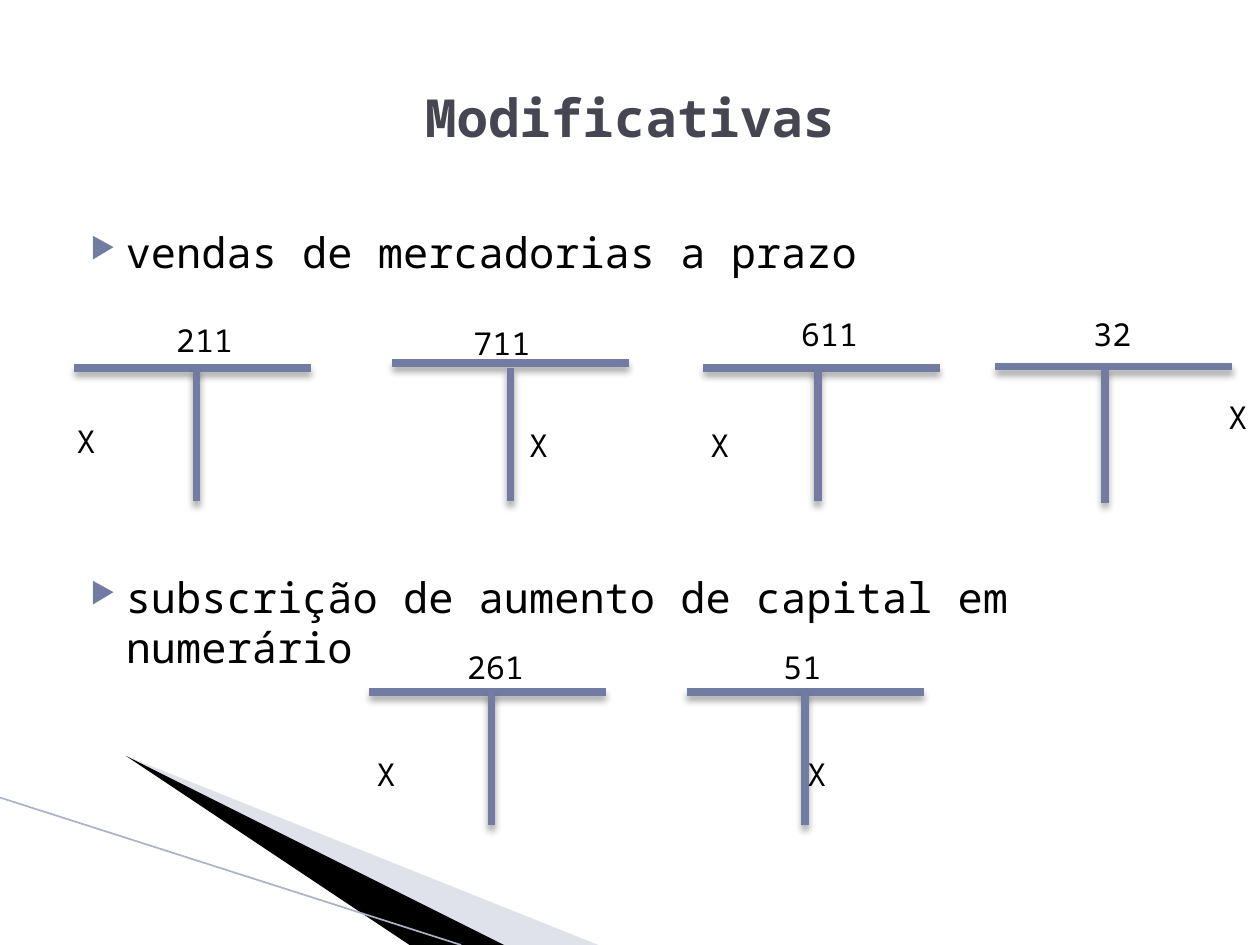
import pptx
import pptx.util
import pptx.dml.color
import pptx.enum.shapes
import pptx.enum.text
import pptx.oxml
import pptx.oxml.ns
from lxml import etree

Inches, Pt = pptx.util.Inches, pptx.util.Pt
RGBColor = pptx.dml.color.RGBColor
Anchor, Align = pptx.enum.text.MSO_ANCHOR, pptx.enum.text.PP_ALIGN
qn = pptx.oxml.ns.qn

FONT = "Noto Sans Mono"
BLACK = RGBColor(0, 0, 0)
TITLE_GREY = RGBColor(0x46, 0x46, 0x53)
SLATE = RGBColor(0x72, 0x7C, 0xA3)
PALE = RGBColor(0xB3, 0xB7, 0xCB)
EDGE = RGBColor(0xAC, 0xB1, 0xC6)

TITLE = "Modificativas"
# Text and space before in points
BULLETS = [("vendas de mercadorias a prazo", 0),
           ("subscrição de aumento de capital em numerário", 168)]
# Account, bar start, stem top, label corner, entry corner
ACCOUNTS = [
    ("211", (0.59, 2.92), (1.56, 2.92), (1.3, 2.5), (0.51, 3.3)),
    ("711", (3.11, 2.88), (4.05, 2.92), (3.66, 2.52), (4.1, 3.33)),
    ("611", (5.58, 2.92), (6.49, 2.92), (6.26, 2.45), (5.54, 3.33)),
    ("32", (7.9, 2.91), (8.77, 2.93), (8.58, 2.45), (9.65, 3.11)),
    ("261", (2.93, 5.49), (3.9, 5.49), (3.61, 5.09), (2.89, 5.94)),
    ("51", (5.45, 5.49), (6.39, 5.49), (6.12, 5.09), (6.31, 5.94)),
]
ENTRY = "X"
BAR_LENGTH, STEM_LENGTH = 1.88, 1.06
# Corner wedges: points, colour, opacity in percent
WEDGES = [
    ([(0.55, 6.5), (5.93, 7.5), (4.53, 7.5)], PALE, 40),
    ([(0.53, 6.49), (4.55, 7.5), (3.68, 7.5)], BLACK, 100),
]


def add_wedge(page, points, color, opacity):
    builder = page.shapes.build_freeform(*points[0], scale=Inches(1))
    builder.add_line_segments(points[1:], close=True)
    wedge = builder.convert_to_shape()
    wedge.shadow.inherit = False
    wedge.line.fill.background()
    wedge.fill.solid()
    wedge.fill.fore_color.rgb = color
    if opacity < 100:
        tint = wedge.fill._xPr.find(".//" + qn("a:srgbClr"))
        etree.SubElement(tint, qn("a:alpha"), val=str(opacity * 1000))


def add_line(page, start, end, color, width, shadow=False):
    line = page.shapes.add_connector(
        pptx.enum.shapes.MSO_CONNECTOR.STRAIGHT,
        *(Inches(value) for value in start + end))
    line.line.color.rgb = color
    line.line.width = Pt(width)
    effects = etree.SubElement(line._element.spPr, qn("a:effectLst"))
    if shadow:
        outer = etree.SubElement(
            effects, qn("a:outerShdw"), blurRad=str(Pt(4)), dist=str(Pt(3)),
            dir="5400000", rotWithShape="0")
        tint = etree.SubElement(outer, qn("a:srgbClr"), val="000000")
        etree.SubElement(tint, qn("a:alpha"), val="35000")


def add_box(page, left, top, width, height):
    box = page.shapes.add_textbox(*map(Inches, (left, top, width, height)))
    box.text_frame.word_wrap = True
    return box.text_frame


def add_span(para, text, size, color=BLACK, bold=False):
    span = para.add_run()
    span.text = text
    span.font.name = FONT
    span.font.size = Pt(size)
    span.font.bold = bold
    span.font.color.rgb = color


def add_bullet(para):
    properties = para._p.get_or_add_pPr()
    properties.set("marL", str(Inches(0.4)))
    properties.set("indent", str(Inches(-0.28)))
    tint = etree.SubElement(properties, qn("a:buClr"))
    etree.SubElement(tint, qn("a:srgbClr"), val=str(SLATE))
    etree.SubElement(properties, qn("a:buSzPct"), val="68000")
    etree.SubElement(properties, qn("a:buChar"), char="▶")


def main():
    deck = pptx.Presentation()
    deck.slide_width, deck.slide_height = Inches(10), Inches(7.5)
    page = deck.slides.add_slide(deck.slide_layouts[6])

    # Corner decoration
    for wedge in WEDGES:
        add_wedge(page, *wedge)
    add_line(page, (0, 6.33), (3.66, 7.5), EDGE, 0.95)

    # Title
    frame = add_box(page, 0.5, 0.3, 9, 1.25)
    frame.vertical_anchor = Anchor.MIDDLE
    frame.paragraphs[0].alignment = Align.CENTER
    add_span(frame.paragraphs[0], TITLE, 30, TITLE_GREY, True)

    # Bulleted operations
    frame = add_box(page, 0.5, 1.75, 9, 5.75)
    for index, (text, gap) in enumerate(BULLETS):
        para = frame.add_paragraph() if index else frame.paragraphs[0]
        add_bullet(para)
        if gap:
            para.space_before = Pt(gap)
        add_span(para, text, 24)

    # T accounts
    for account, bar, stem, label, entry in ACCOUNTS:
        add_line(page, bar, (bar[0] + BAR_LENGTH, bar[1]), SLATE, 4.33, True)
        add_line(page, stem, (stem[0], stem[1] + STEM_LENGTH), SLATE, 4.33, True)
        add_span(add_box(page, *label, 1.2, 0.4).paragraphs[0], account, 18)
        frame = add_box(page, *entry, 0.35, 0.4)
        frame.margin_right = 0
        add_span(frame.paragraphs[0], ENTRY, 18)

    deck.save("out.pptx")


if __name__ == "__main__":
    main()
